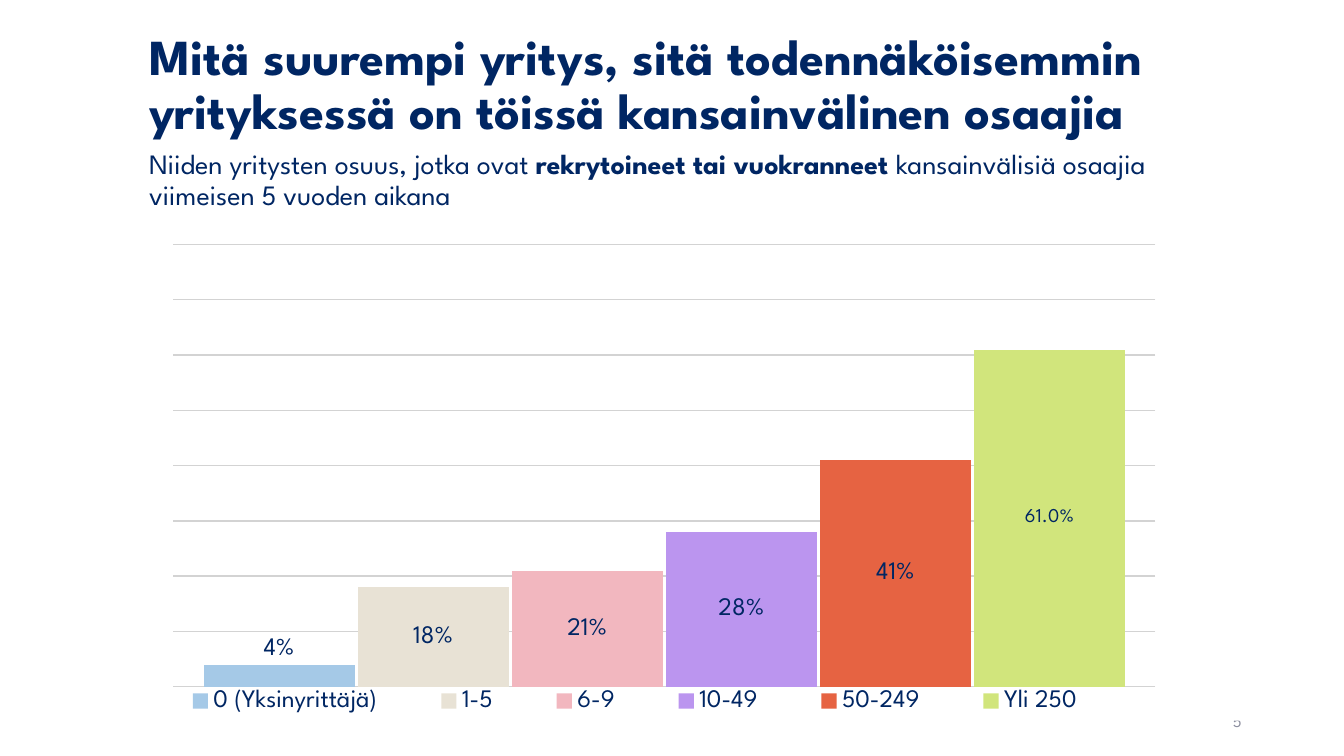
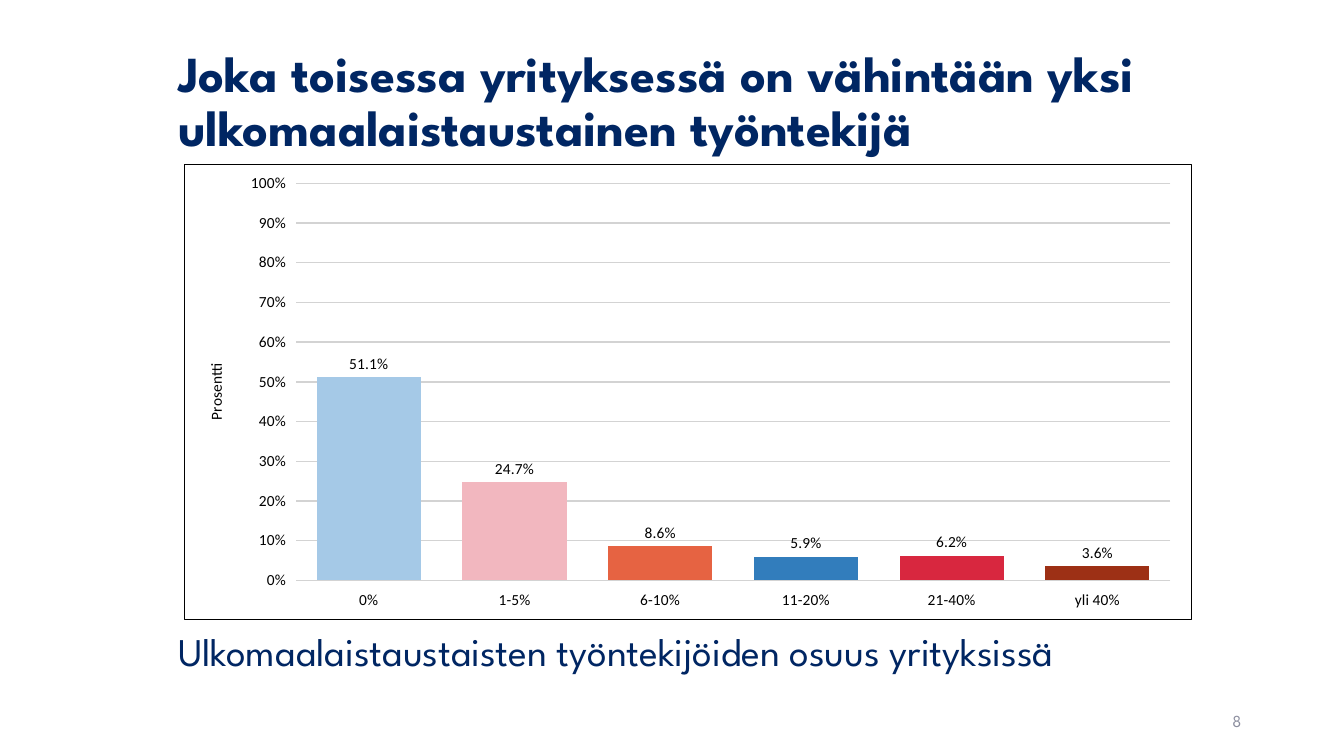
"""Builds two slides on international staff in companies, each with a column chart."""
from lxml import etree
from pptx import Presentation
from pptx.chart.data import CategoryChartData
from pptx.dml.color import RGBColor
from pptx.enum.chart import XL_CHART_TYPE, XL_LABEL_POSITION, XL_LEGEND_POSITION, XL_TICK_MARK
from pptx.enum.shapes import MSO_SHAPE
from pptx.enum.text import MSO_ANCHOR, PP_ALIGN
from pptx.oxml import parse_xml
from pptx.oxml.ns import nsdecls, qn
from pptx.util import Pt

COLORS = {
    "navy": "002663", "grey": "8C8E9F", "grid": "D3D3D3", "black": "000000",
    "white": "FFFFFF", "sky": "A5C9E7", "sand": "E8E2D5", "pink": "F2B7BF",
    "violet": "BB95EF", "orange": "E66342", "lime": "D1E57C", "blue": "327DBC",
    "red": "D8273F", "brown": "9D3015",
}
HEAD_FONT = "League Spartan"
CHART_FONT = "Calibri"


def rgb(name):
    return RGBColor.from_string(COLORS[name])


def style_font(font, size, color="navy", name=HEAD_FONT, bold=False):
    font.name, font.size, font.bold = name, Pt(size), bold
    font.color.rgb = rgb(color)


def write(tf, paragraphs, color="navy", align=PP_ALIGN.LEFT, spacing=0.9, gap=0):
    tf.word_wrap = True
    tf.vertical_anchor = MSO_ANCHOR.MIDDLE
    for i, (size, runs) in enumerate(paragraphs):
        p = tf.paragraphs[0] if i == 0 else tf.add_paragraph()
        p.alignment, p.line_spacing = align, spacing
        if i:
            p.space_before = Pt(gap)
        for text, bold in runs:
            r = p.add_run()
            r.text = text
            style_font(r.font, size, color, bold=bold)


def add_text(s, box, paragraphs, **options):
    write(s.shapes.add_textbox(*map(Pt, box)).text_frame, paragraphs, **options)


def add_panel(s, box, paragraphs, **options):
    sp = s.shapes.add_shape(MSO_SHAPE.RECTANGLE, *map(Pt, box))
    sp.shadow.inherit = False
    sp.fill.solid()
    sp.fill.fore_color.rgb = rgb("white")
    sp.line.fill.background()
    write(sp.text_frame, paragraphs, **options)


def add_page_number(s, number):
    add_text(s, (678, 500.4, 216, 28.8), [(12, [(number, False)])],
             color="grey", align=PP_ALIGN.RIGHT, spacing=1)


def set_layout(parent, index, part, box, inner=False):
    for old in parent.findall(qn("c:layout")):
        parent.remove(old)
    layout = etree.Element(qn("c:layout"))
    manual = etree.SubElement(layout, qn("c:manualLayout"))
    values = [("layoutTarget", "inner")] if inner else []
    values += [("xMode", "edge"), ("yMode", "edge")]
    values += [(tag, length / total) for tag, length, total in zip("xywh", part, box[2:] * 2)]
    for tag, value in values:
        etree.SubElement(manual, qn(f"c:{tag}")).set("val", str(value))
    parent.insert(index, layout)


def frame_chart(chart, border):
    line = '<a:ln><a:noFill/></a:ln>'
    if border:
        line = (f'<a:ln w="{Pt(0.5)}"><a:solidFill><a:srgbClr val="{COLORS[border]}"/>'
                '</a:solidFill></a:ln>')
    chart.element.find(qn("c:chart")).addnext(parse_xml(
        f'<c:spPr {nsdecls("c", "a")}><a:solidFill><a:srgbClr val="{COLORS["white"]}"/>'
        f'</a:solidFill>{line}</c:spPr>'))


def add_columns(s, box, cats, series, plot_box, maximum, font, border=None):
    data = CategoryChartData()
    data.categories = cats
    for name, values in series:
        data.add_series(name, values)
    chart = s.shapes.add_chart(XL_CHART_TYPE.COLUMN_CLUSTERED, *map(Pt, box), data).chart
    chart.has_title = chart.has_legend = False
    style_font(chart.font, *font)
    plot = chart.plots[0]
    plot.gap_width, plot.vary_by_categories = 40, False
    axis = chart.value_axis
    axis.minimum_scale, axis.maximum_scale, axis.major_unit = 0, maximum, 0.1
    axis.has_major_gridlines = True
    line = axis.major_gridlines.format.line
    line.color.rgb, line.width = rgb("grid"), Pt(1)
    set_layout(chart.element.find(".//" + qn("c:plotArea")), 0, plot_box, box, inner=True)
    frame_chart(chart, border)
    return chart


def fill_bar(bar, color):
    bar.format.fill.solid()
    bar.format.fill.fore_color.rgb = rgb(color)


def label_bars(labels, position, number_format, font):
    labels.show_value = True
    labels.position = position
    labels.number_format, labels.number_format_is_linked = number_format, False
    style_font(labels.font, *font)


def add_legend(chart, size, part, box):
    chart.has_legend = True
    chart.legend.position = XL_LEGEND_POSITION.BOTTOM
    chart.legend.include_in_layout = False
    style_font(chart.legend.font, size)
    set_layout(chart.element.find(".//" + qn("c:legend")), 1, part, box)


def company_size_slide(s):
    add_panel(s, (99.4, 0, 794, 173.5), [
        (36, [("Mitä suurempi yritys, sitä todennäköisemmin yrityksessä on töissä "
               "kansainvälinen osaajia", True)]),
        (20, [("Niiden yritysten osuus, jotka ovat ", False),
              ("rekrytoineet tai vuokranneet ", True),
              ("kansainvälisiä osaajia viimeisen 5 vuoden aikana", False)]),
    ], gap=7)
    add_page_number(s, "5")
    sizes = [("0 (Yksinyrittäjä)", 0.04, "sky"), ("1-5", 0.18, "sand"),
             ("6-9", 0.21, "pink"), ("10-49", 0.28, "violet"),
             ("50-249", 0.41, "orange"), ("Yli 250", 0.61, "lime")]
    box = (98, 163.4, 861.8, 351.4)
    chart = add_columns(s, box, ["1"], [(name, [share]) for name, share, _ in sizes],
                        (25.8, 11.3, 701.5, 315.9), 0.8, (14,))
    chart.plots[0].overlap = -2
    chart.category_axis.visible = chart.value_axis.visible = False
    for bar, (name, share, color) in zip(chart.plots[0].series, sizes):
        fill_bar(bar, color)
        bar.invert_if_negative = False
        last = name == "Yli 250"
        position = XL_LABEL_POSITION.OUTSIDE_END if share < 0.1 else XL_LABEL_POSITION.CENTER
        label_bars(bar.data_labels, position, "0.0%" if last else "0%", (14 if last else 18,))
    add_legend(chart, 18, (0, 323.3, 711, 28.1), box)


def foreign_staff_slide(s):
    add_text(s, (120.2, 21.6, 762.5, 104.4), [
        (36, [("Joka toisessa yrityksessä on vähintään yksi ulkomaalaistaustainen "
               "työntekijä", True)])])
    add_page_number(s, "8")
    shares = [("0%", 0.511, "sky"), ("1-5%", 0.247, "pink"), ("6-10%", 0.086, "orange"),
              ("11-20%", 0.059, "blue"), ("21-40%", 0.062, "red"), ("yli 40%", 0.036, "brown")]
    font = (11, "black", CHART_FONT)
    cats, values, colors = zip(*shares)
    chart = add_columns(s, (131.5, 117.4, 720, 325), cats, [("Series 1", values)],
                        (79.7, 13.3, 625, 284.2), 1, font, "black")
    for axis in (chart.category_axis, chart.value_axis):
        axis.major_tick_mark = XL_TICK_MARK.OUTSIDE
        axis.format.line.fill.background()
        style_font(axis.tick_labels.font, *font)
    labels = chart.value_axis.tick_labels
    labels.number_format, labels.number_format_is_linked = "0%", False
    p = chart.value_axis.axis_title.text_frame.paragraphs[0]
    p.text = "Prosentti"
    style_font(p.runs[0].font, *font)
    bars = chart.plots[0].series[0]
    bars.invert_if_negative = False
    for i, color in enumerate(colors):
        fill_bar(bars.points[i], color)
    label_bars(bars.data_labels, XL_LABEL_POSITION.OUTSIDE_END, "0.0%", font)
    add_text(s, (120.2, 434.2, 762.5, 66.2), [
        (28, [("Ulkomaalaistaustaisten työntekijöiden osuus yrityksissä", False)])])


def main():
    prs = Presentation()
    prs.slide_width, prs.slide_height = Pt(960), Pt(540)
    for build in (company_size_slide, foreign_staff_slide):
        build(prs.slides.add_slide(prs.slide_layouts[6]))
    prs.save("out.pptx")


if __name__ == "__main__":
    main()
